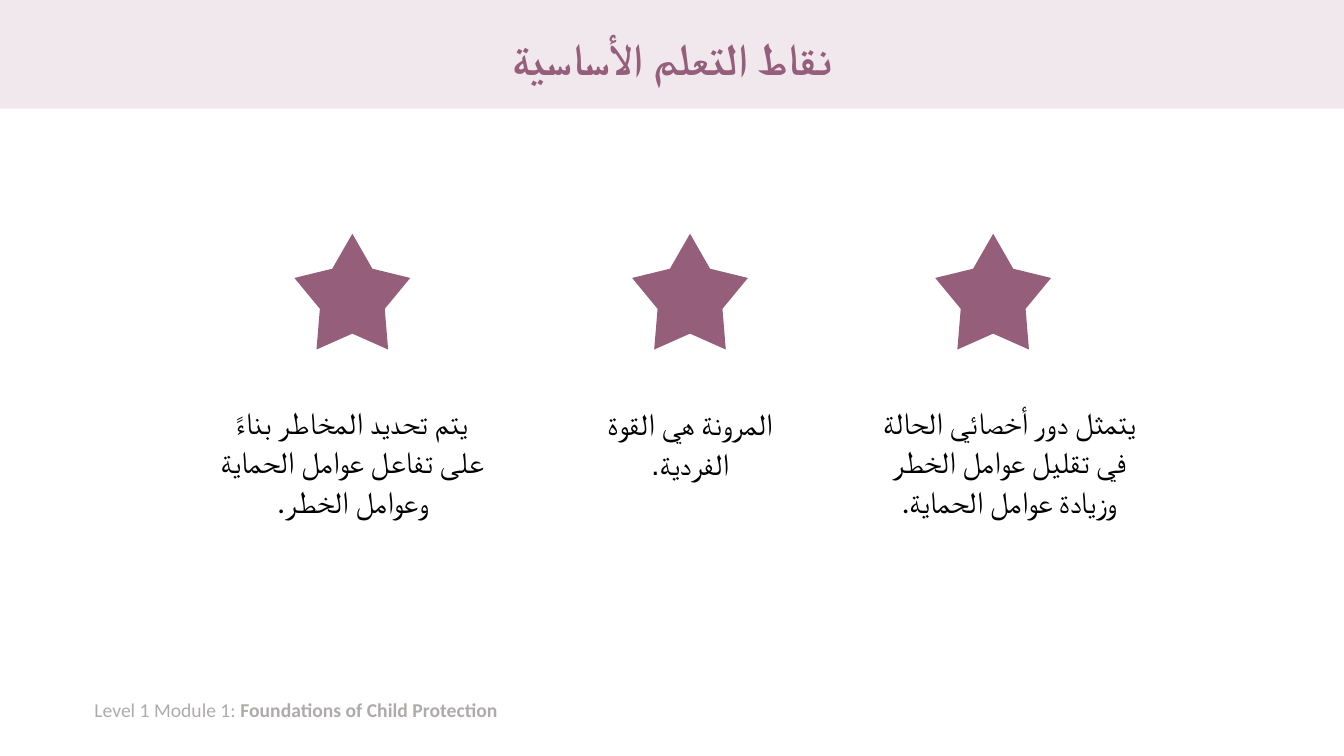
from lxml.etree import SubElement
from pptx import Presentation
from pptx.dml.color import RGBColor
from pptx.enum.shapes import MSO_SHAPE
from pptx.enum.text import MSO_ANCHOR, PP_ALIGN
from pptx.oxml.ns import qn
from pptx.util import Cm, Pt

COLORS = {"band": "F1E8ED", "plum": "955F7B", "text": "000000", "footer": "AFABAB"}


def add_shape(kind, left, top, width, height, color):
    sp = s.shapes.add_shape(kind, Cm(left), Cm(top), Cm(width), Cm(height))
    sp.shadow.inherit = False
    sp.fill.solid()
    sp.fill.fore_color.rgb = RGBColor.from_string(COLORS[color])
    sp.line.fill.background()
    return sp


def format_arabic(p, size, color, spacing, bold=False):
    p.alignment = PP_ALIGN.CENTER
    p.line_spacing = spacing
    p._p.get_or_add_pPr().set("rtl", "1")
    for r in p.runs:
        name = "Arial" if r.text == "." else "Calibri"
        r.font.name = name
        r.font.size = Pt(size)
        r.font.bold = bold
        r.font.color.rgb = RGBColor.from_string(COLORS[color])
        SubElement(r.font._element, qn("a:cs"), typeface=name)


prs = Presentation()
prs.slide_width, prs.slide_height = Cm(33.87), Cm(19.05)
s = prs.slides.add_slide(prs.slide_layouts[5])

band = add_shape(MSO_SHAPE.RECTANGLE, 0, 0, 33.87, 2.74, "band")
title = s.shapes.title
band._element.addnext(title._element)
title.left, title.top, title.width, title.height = Cm(2.34), Cm(0.33), Cm(29.2), Cm(2.41)
title.text_frame.text = "نقاط التعلم الأساسية"
title.text_frame.vertical_anchor = MSO_ANCHOR.MIDDLE
format_arabic(title.text_frame.paragraphs[0], 32, "plum", 0.9, True)

points = [
    (23.57, 21.87, 9.98, 7.14, 3.23,
     ["يتمثل دور أخصائي الحالة في تقليل عوامل الخطر وزيادة عوامل الحماية."]),
    (15.93, 14.22, 10.01, 6.35, 2.21, ["المرونة هي القوة الفردية", "."]),
    (7.42, 5.31, 9.98, 7.14, 3.23,
     ["يتم تحديد المخاطر بناءً على تفاعل عوامل الحماية وعوامل الخطر."]),
]
for star_left, left, top, width, height, parts in points:
    star = add_shape(MSO_SHAPE.STAR_5_POINT, star_left, 5.89, 2.92, 2.92, "plum")
    star.adjustments[0] = 0.28
    tf = s.shapes.add_textbox(Cm(left), Cm(top), Cm(width), Cm(height)).text_frame
    tf.word_wrap = True
    p = tf.paragraphs[0]
    for part in parts:
        p.add_run().text = part
    format_arabic(p, 22, "text", 1.07)

tf = s.shapes.add_textbox(Cm(2.13), Cm(17.45), Cm(28.83), Cm(0.86)).text_frame
tf.word_wrap = True
for text, bold in [("Level 1 Module 1: ", False), ("Foundations of Child Protection", True)]:
    r = tf.paragraphs[0].add_run()
    r.text = text
    r.font.name = "Calibri"
    r.font.size = Pt(14)
    r.font.bold = bold
    r.font.color.rgb = RGBColor.from_string(COLORS["footer"])

prs.save("out.pptx")
